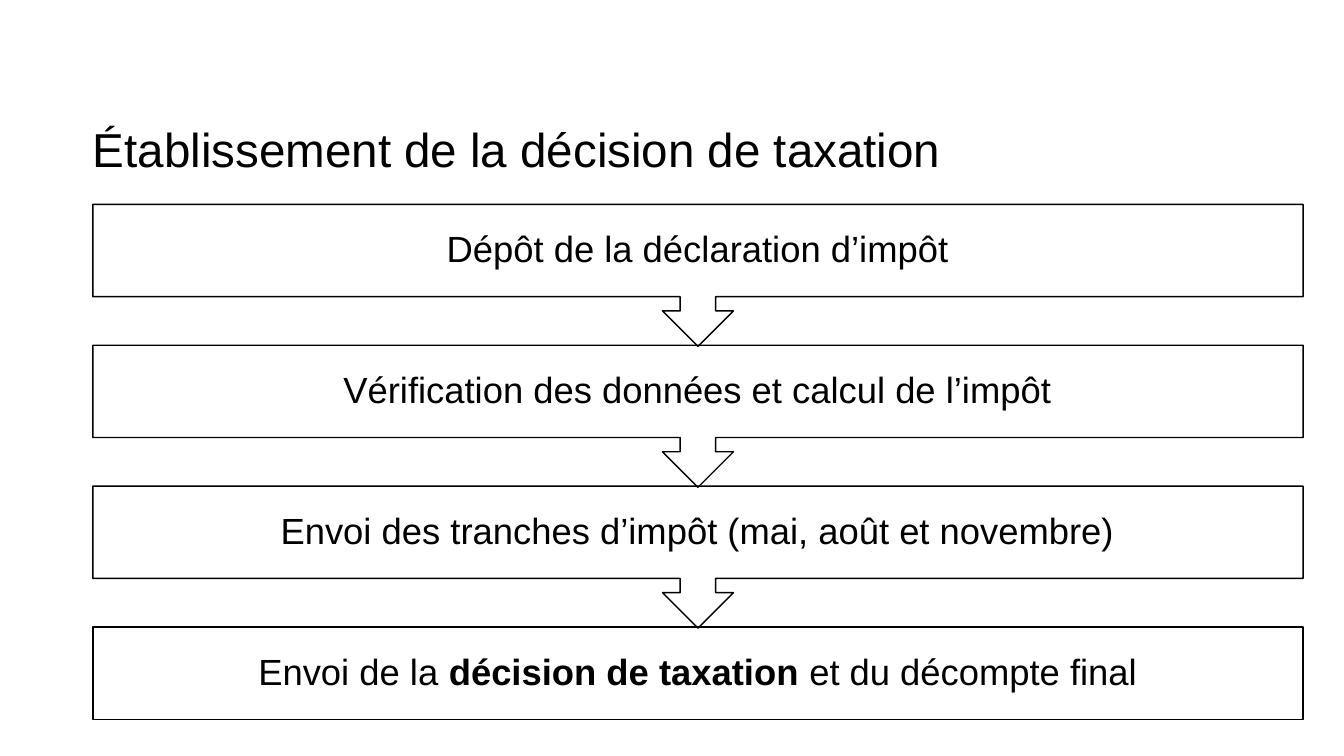
"""Build a slide showing the four steps that lead to a tax decision."""
from pptx import Presentation
from pptx.dml.color import RGBColor
from pptx.enum.shapes import MSO_SHAPE
from pptx.enum.text import MSO_ANCHOR, PP_ALIGN
from pptx.util import Cm, Pt

THEME = {
    "ink": RGBColor(0, 0, 0),
    "title": {"name": "Arial", "size": Pt(34), "bold": False},
    "step": {"name": "Arial", "size": Pt(26)},
    "line": Pt(1),
}
STEPS = [
    [("Dépôt de la déclaration d’impôt", False)],
    [("Vérification des données et calcul de l’impôt", False)],
    [("Envoi des tranches d’impôt (mai, août et novembre)", False)],
    [("Envoi de la ", False), ("décision de taxation", True),
     (" et du décompte final", False)],
]
LEFT, WIDTH = Cm(2.34), Cm(30.5)
TOP, PITCH = Cm(5.15), Cm(3.55)
TALL, LOW = Cm(3.58), Cm(2.33)


def style(font, form):
    for key, value in form.items():
        setattr(font, key, value)
    font.color.rgb = THEME["ink"]


def frame(text, pad, align):
    form = {"word_wrap": True, "vertical_anchor": MSO_ANCHOR.MIDDLE}
    for side in ("left", "top", "right", "bottom"):
        form[f"margin_{side}"] = pad
    for key, value in form.items():
        setattr(text, key, value)
    para = text.paragraphs[0]
    para.alignment, para.line_spacing = align, 0.9
    return para


deck = Presentation()
deck.slide_width, deck.slide_height = Cm(33.87), Cm(19.05)
slide = deck.slides.add_slide(deck.slide_layouts[5])

title = slide.shapes.title
title.left, title.top, title.width, title.height = LEFT, Cm(2.97), WIDTH, Cm(1.73)
para = frame(title.text_frame, 0, PP_ALIGN.LEFT)
run = para.add_run()
run.text = "Établissement de la décision de taxation"
style(run.font, THEME["title"])

for row, parts in enumerate(STEPS):
    last = row == len(STEPS) - 1
    kind = MSO_SHAPE.RECTANGLE if last else MSO_SHAPE.DOWN_ARROW_CALLOUT
    step = slide.shapes.add_shape(
        kind, LEFT, TOP + row * PITCH, WIDTH, LOW if last else TALL)
    step.shadow.inherit = False
    step.fill.background()
    step.line.color.rgb = THEME["ink"]
    step.line.width = THEME["line"]
    para = frame(step.text_frame, Cm(0.5), PP_ALIGN.CENTER)
    for words, bold in parts:
        run = para.add_run()
        run.text = words
        style(run.font, THEME["step"] | {"bold": bold})

deck.save("out.pptx")
